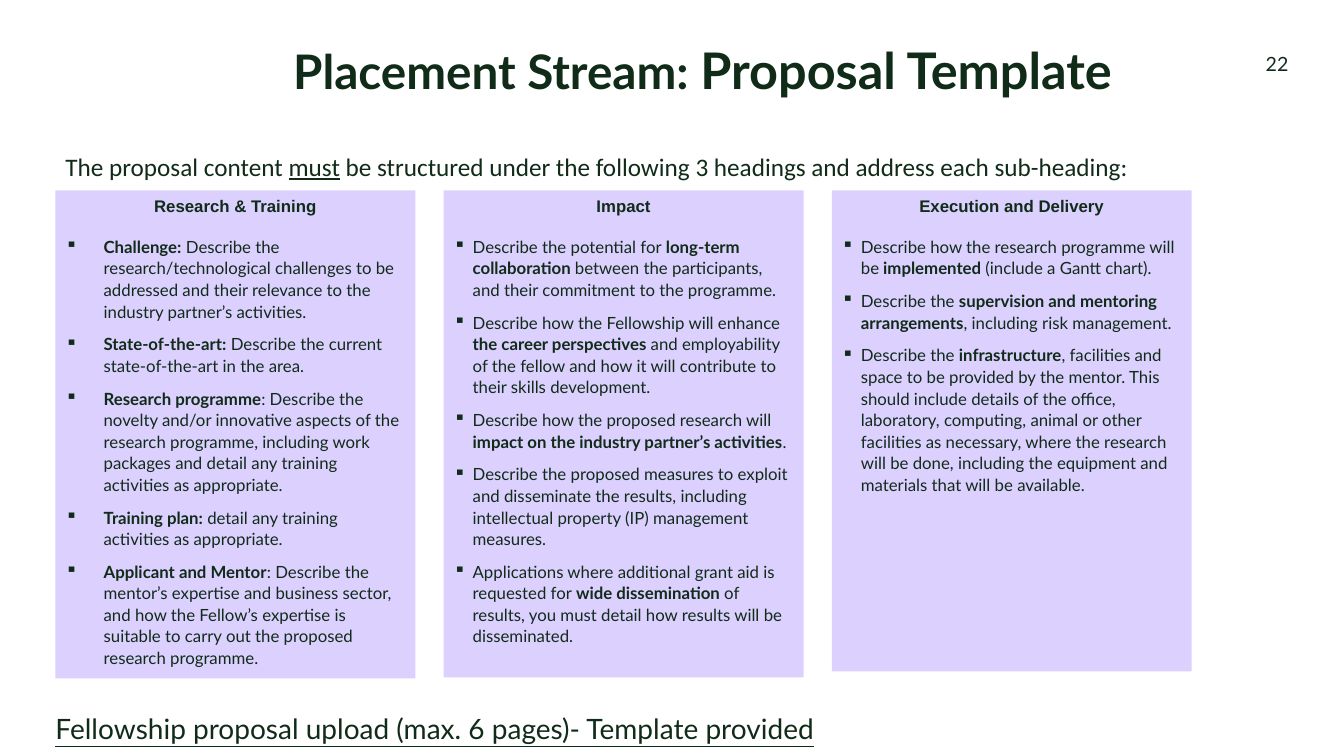
import pptx
import pptx.util
import pptx.dml.color
import pptx.enum.shapes
import pptx.enum.text
from lxml import etree

INCH = pptx.util.Inches
PT = pptx.util.Pt
ALIGN = pptx.enum.text.PP_ALIGN
ANCHOR = pptx.enum.text.MSO_ANCHOR
COLORS = {"ink": "112B19", "panel": "DCD0FF"}
LEFT, TOP, STEP, WIDTH = 0.55, 1.89, 3.85, 3.57

# Each panel: heading, height, bullet indent, points; ** marks bold text.
PANELS = [
    ("Research & Training", 4.84, 0.38, [
        "**Challenge:** Describe the research/technological challenges to be "
        "addressed and their relevance to the industry partner’s activities.",
        "**State-of-the-art:** Describe the current state-of-the-art in the area.",
        "**Research programme**: Describe the novelty and/or innovative aspects "
        "of the research programme, including work packages and detail any "
        "training activities as appropriate.",
        "**Training plan: **detail any training activities as appropriate.",
        "**Applicant and Mentor**: Describe the mentor’s expertise and business "
        "sector, and how the Fellow’s expertise is suitable to carry out the "
        "proposed research programme.",
    ]),
    ("Impact", 4.83, 0.19, [
        "Describe the potential for **long-term collaboration **between the "
        "participants, and their commitment to the programme.",
        "Describe how the Fellowship will enhance **the career perspectives **"
        "and employability of the fellow and how it will contribute to their "
        "skills development.",
        "Describe how the proposed research will **impact on the industry "
        "partner’s activities**.",
        "Describe the proposed measures to exploit and disseminate the results, "
        "including intellectual property (IP) management measures.",
        "Applications where additional grant aid is requested for **wide "
        "dissemination **of results, you must detail how results will be "
        "disseminated.",
    ]),
    ("Execution and Delivery", 4.77, 0.19, [
        "Describe how the research programme will be** implemented **(include "
        "a Gantt chart).",
        "Describe the **supervision and mentoring arrangements**, including "
        "risk management.",
        "Describe the **infrastructure**, facilities and space to be provided by "
        "the mentor. This should include details of the office, laboratory, "
        "computing, animal or other facilities as necessary, where the research "
        "will be done, including the equipment and materials that will be "
        "available.",
    ]),
]


def color(name):
    return pptx.dml.color.RGBColor.from_string(COLORS[name])


def add_run(para, text, size, face="Lato", bold=False, line=False):
    run = para.add_run()
    run.text = text
    font = run.font
    font.size, font.name = PT(size), face
    font.bold, font.underline = bold, line
    font.color.rgb = color("ink")


def add_text(slide, box, runs, inset=True, align=ALIGN.LEFT, space=1.0,
             anchor=ANCHOR.TOP):
    """Add a one-paragraph box; each run is a dict of add_run arguments."""
    frame = slide.shapes.add_textbox(*map(INCH, box)).text_frame
    frame.word_wrap = True
    frame.vertical_anchor = anchor
    if not inset:
        frame.margin_left = frame.margin_right = 0
        frame.margin_top = frame.margin_bottom = 0
    para = frame.paragraphs[0]
    para.alignment, para.line_spacing = align, space
    for run in runs:
        add_run(para, **run)


def add_point(frame, text, indent):
    para = frame.add_paragraph()
    para.alignment = ALIGN.LEFT
    para.line_spacing, para.space_after = 1.07, PT(8)
    props = para._p.get_or_add_pPr()
    props.set("marL", str(INCH(indent)))
    props.set("indent", str(-INCH(indent)))
    mark = etree.SubElement(props, pptx.oxml.ns.qn("a:buChar"))
    mark.set("char", "▪")
    for num, part in enumerate(text.split("**")):
        if part:
            add_run(para, part, 12, bold=num % 2 == 1)


def add_panel(slide, col, head, height, indent, points):
    box = slide.shapes.add_shape(
        pptx.enum.shapes.MSO_SHAPE.RECTANGLE,
        INCH(LEFT + col * STEP), INCH(TOP), INCH(WIDTH), INCH(height))
    box.shadow.inherit = False
    box.fill.solid()
    box.fill.fore_color.rgb = color("panel")
    box.line.fill.background()
    frame = box.text_frame
    frame.word_wrap = True
    frame.vertical_anchor = ANCHOR.TOP
    para = frame.paragraphs[0]
    para.alignment, para.space_after = ALIGN.CENTER, PT(14)
    add_run(para, head, 12, "Arial", bold=True)
    for point in points:
        add_point(frame, point, indent)


def main():
    deck = pptx.Presentation()
    deck.slide_width, deck.slide_height = INCH(13.33), INCH(7.5)
    slide = deck.slides.add_slide(deck.slide_layouts[6])

    add_text(slide, (12.18, 0.54, 0.6, 0.69), [dict(text="22", size=14)],
             inset=False, align=ALIGN.RIGHT, space=0.9)
    add_text(slide, (LEFT, 6.9, 12.23, 0.49), [
        dict(text="Fellowship proposal upload (max. 6 pages)- Template provided",
             size=20, line=True)],
        inset=False, space=1.1, anchor=ANCHOR.BOTTOM)
    add_text(slide, (LEFT, 1.45, 10.95, 0.84), [
        dict(text="The proposal content ", size=18, face="Calibri"),
        dict(text="must", size=18, face="Calibri", line=True),
        dict(text=" be structured under the following 3 headings and address "
             "each sub-heading:", size=18, face="Calibri")])
    add_text(slide, (2.81, 0.41, 10.52, 1.04), [
        dict(text="Placement Stream: ", size=34, bold=True),
        dict(text="Proposal Template", size=36, bold=True)], space=0.9)

    for col, panel in enumerate(PANELS):
        add_panel(slide, col, *panel)
    deck.save("out.pptx")


if __name__ == "__main__":
    main()
